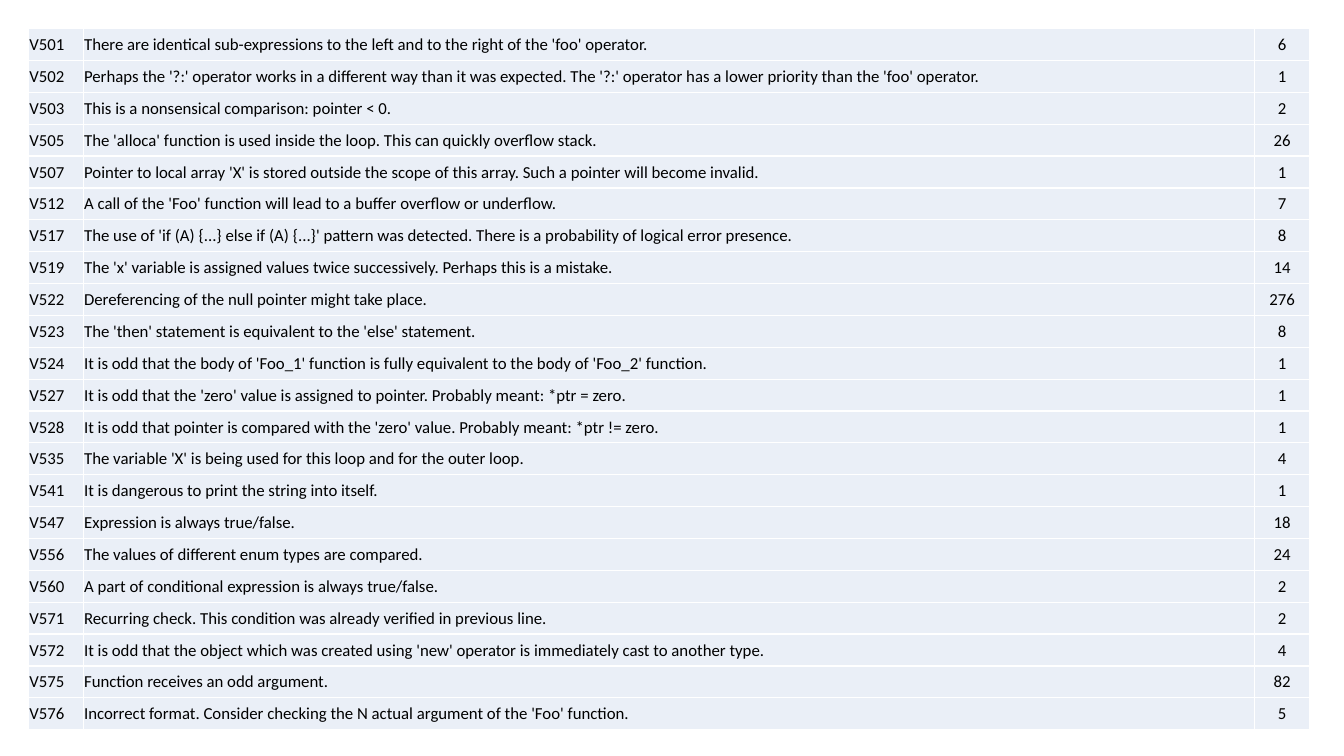
"""Build a slide that lists analyzer diagnostics and how often each one occurred."""
from lxml.etree import SubElement
from pptx import Presentation
from pptx.dml.color import RGBColor
from pptx.enum.text import MSO_ANCHOR, PP_ALIGN
from pptx.oxml.ns import qn
from pptx.util import Cm, Pt

BLACK = RGBColor(0x00, 0x00, 0x00)
WHITE = RGBColor(0xFF, 0xFF, 0xFF)
PALE_BLUE = RGBColor(0xEA, 0xEF, 0xF7)

COLUMN_WIDTHS = (Cm(1.38), Cm(29.52), Cm(1.38))
COLUMN_ALIGNMENTS = (PP_ALIGN.LEFT, PP_ALIGN.LEFT, PP_ALIGN.CENTER)
TABLE_HEIGHT = Cm(17.68)
MARGIN = Cm(0.72)

DIAGNOSTICS = (
    ("V501", "There are identical sub-expressions to the left and to the right of the 'foo' operator.", 6),
    ("V502", "Perhaps the '?:' operator works in a different way than it was expected. "
             "The '?:' operator has a lower priority than the 'foo' operator.", 1),
    ("V503", "This is a nonsensical comparison: pointer < 0.", 2),
    ("V505", "The 'alloca' function is used inside the loop. This can quickly overflow stack.", 26),
    ("V507", "Pointer to local array 'X' is stored outside the scope of this array. "
             "Such a pointer will become invalid.", 1),
    ("V512", "A call of the 'Foo' function will lead to a buffer overflow or underflow.", 7),
    ("V517", "The use of 'if (A) {...} else if (A) {...}' pattern was detected. "
             "There is a probability of logical error presence.", 8),
    ("V519", "The 'x' variable is assigned values twice successively. Perhaps this is a mistake.", 14),
    ("V522", "Dereferencing of the null pointer might take place.", 276),
    ("V523", "The 'then' statement is equivalent to the 'else' statement.", 8),
    ("V524", "It is odd that the body of 'Foo_1' function is fully equivalent to the body of 'Foo_2' function.", 1),
    ("V527", "It is odd that the 'zero' value is assigned to pointer. Probably meant: *ptr = zero.", 1),
    ("V528", "It is odd that pointer is compared with the 'zero' value. Probably meant: *ptr != zero.", 1),
    ("V535", "The variable 'X' is being used for this loop and for the outer loop.", 4),
    ("V541", "It is dangerous to print the string into itself.", 1),
    ("V547", "Expression is always true/false.", 18),
    ("V556", "The values of different enum types are compared.", 24),
    ("V560", "A part of conditional expression is always true/false.", 2),
    ("V571", "Recurring check. This condition was already verified in previous line.", 2),
    ("V572", "It is odd that the object which was created using 'new' operator "
             "is immediately cast to another type.", 4),
    ("V575", "Function receives an odd argument.", 82),
    ("V576", "Incorrect format. Consider checking the N actual argument of the 'Foo' function.", 5),
)


def add_borders(cell, color, width):
    """Draw a solid line on all four sides of a cell."""
    properties = cell._tc.get_or_add_tcPr()
    for side in ("a:lnL", "a:lnR", "a:lnT", "a:lnB"):
        line = SubElement(properties, qn(side), w=str(width))
        fill = SubElement(line, qn("a:solidFill"))
        SubElement(fill, qn("a:srgbClr"), val=str(color))


def fill_cell(cell, text, alignment):
    """Write a text into a cell and format the cell."""
    add_borders(cell, WHITE, Pt(1))
    cell.fill.solid()
    cell.fill.fore_color.rgb = PALE_BLUE
    cell.vertical_anchor = MSO_ANCHOR.MIDDLE
    cell.margin_left = cell.margin_right = cell.margin_top = Cm(0.02)
    cell.margin_bottom = 0
    cell.text_frame.text = text
    para = cell.text_frame.paragraphs[0]
    para.alignment = alignment
    font = para.runs[0].font
    font.name = "Calibri"
    font.size = Pt(12)
    font.color.rgb = BLACK


def add_diagnostics_table(page):
    """Add the table of codes, messages and counts."""
    table = page.shapes.add_table(
        len(DIAGNOSTICS), len(COLUMN_WIDTHS), MARGIN, MARGIN, sum(COLUMN_WIDTHS), TABLE_HEIGHT
    ).table
    table.first_row = False
    table.horz_banding = False
    for column, width in zip(table.columns, COLUMN_WIDTHS):
        column.width = width
    for row, diagnostic in zip(table.rows, DIAGNOSTICS):
        for cell, value, alignment in zip(row.cells, diagnostic, COLUMN_ALIGNMENTS):
            fill_cell(cell, str(value), alignment)


def main():
    """Create the deck and save it."""
    deck = Presentation()
    deck.slide_width = Cm(33.87)
    deck.slide_height = Cm(19.05)
    page = deck.slides.add_slide(deck.slide_layouts.get_by_name("Blank"))
    add_diagnostics_table(page)
    deck.save("out.pptx")


if __name__ == "__main__":
    main()
